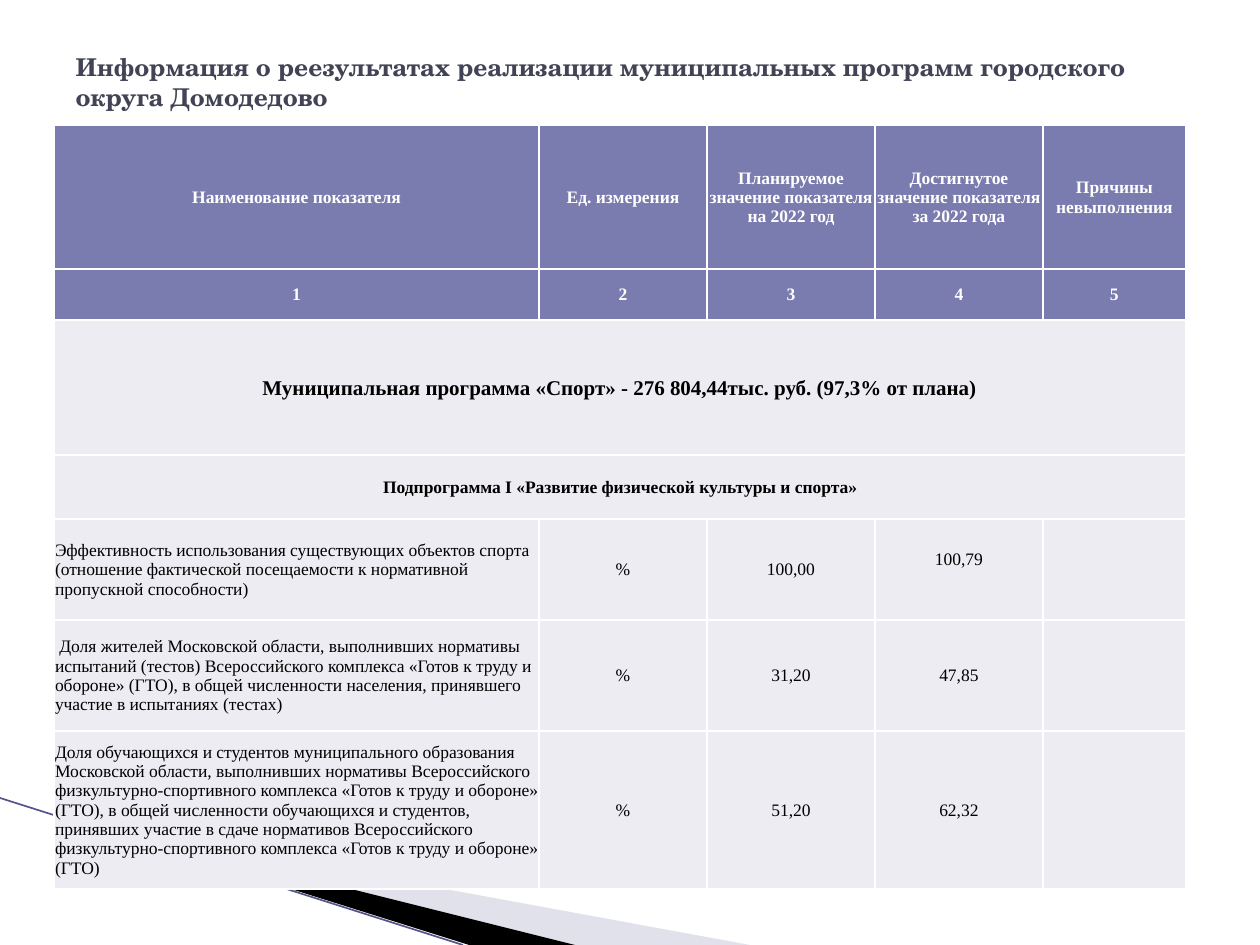
"""Build the slide on results of the municipal sport programme."""
from dataclasses import dataclass

from lxml import etree
from pptx import Presentation
from pptx.dml.color import RGBColor
from pptx.enum.shapes import MSO_CONNECTOR
from pptx.enum.text import MSO_ANCHOR, PP_ALIGN
from pptx.oxml.ns import qn
from pptx.util import Pt

LEFT, CENTER = PP_ALIGN.LEFT, PP_ALIGN.CENTER
MIDDLE = MSO_ANCHOR.MIDDLE
STRAIGHT = MSO_CONNECTOR.STRAIGHT
SCALE = 914400 / 126
SERIF = "Times New Roman"
HEAD, BODY, WHITE, BLACK = "7A7BAE", "ECECF2", "FFFFFF", "000000"


@dataclass
class Wedge:
    points: list
    fill: str
    alpha: int = 100


@dataclass
class Row:
    height: int
    texts: list
    fill: str = BODY
    color: str = BLACK
    bold: bool = True
    size: int = 10
    first: PP_ALIGN = CENTER


WEDGES = [
    Wedge([(69, 820), (750, 945), (575, 945), (69, 819)], "B6B6D1", 40),
    Wedge([(67, 818), (575, 945), (469, 945), (68, 819)], BLACK),
]
WIDTHS = [485, 168, 168, 168, 143]
ROWS = [
    Row(144, ["Наименование показателя", "Ед. измерения",
              "Планируемое значение показателя на 2022 год",
              "Достигнутое значение показателя за 2022 года",
              "Причины невыполнения"], HEAD, WHITE),
    Row(51, ["1", "2", "3", "4", "5"], HEAD, WHITE),
    Row(135, ["Муниципальная программа «Спорт» - 276 804,44тыс. руб. "
              "(97,3% от плана)"], size=12),
    Row(64, ["Подпрограмма I «Развитие физической культуры и спорта»"]),
    Row(101, ["Эффективность использования существующих объектов спорта "
              "(отношение фактической посещаемости к нормативной пропускной "
              "способности)", "%", "100,00", "100,79", ""],
        bold=False, first=LEFT),
    Row(111, [" Доля жителей Московской области, выполнивших нормативы "
              "испытаний (тестов) Всероссийского комплекса «Готов к труду и "
              "обороне» (ГТО), в общей численности населения, принявшего "
              "участие в испытаниях (тестах)", "%", "31,20", "47,85", ""],
        bold=False, first=LEFT),
    Row(158, ["Доля обучающихся и студентов муниципального образования "
              "Московской области, выполнивших нормативы Всероссийского "
              "физкультурно-спортивного комплекса «Готов к труду и обороне» "
              "(ГТО), в общей численности обучающихся и студентов, принявших "
              "участие в сдаче нормативов Всероссийского "
              "физкультурно-спортивного комплекса «Готов к труду и обороне» "
              "(ГТО)", "%", "51,20", "62,32", ""],
        bold=False, first=LEFT),
]


def px(count: int) -> int:
    """Turn pixels into EMU."""
    return round(count * SCALE)


def paint(target, color: str) -> None:
    """Give a fill a solid colour."""
    target.solid()
    target.fore_color.rgb = RGBColor.from_string(color)


def style(frame, font: str, size: int, color: str, bold: bool, align) -> None:
    """Format all text in a frame."""
    for para in frame.paragraphs:
        para.alignment = align
        para.font.size = Pt(size)
        for run in para.runs:
            run.font.name = font
            run.font.size = Pt(size)
            run.font.bold = bold
            run.font.color.rgb = RGBColor.from_string(color)


def draw_wedge(slide, wedge: Wedge) -> None:
    """Draw one corner wedge."""
    start, *rest = wedge.points
    pen = slide.shapes.build_freeform(*start, scale=SCALE)
    pen.add_line_segments(rest)
    shape = pen.convert_to_shape()
    shape.shadow.inherit = False
    paint(shape.fill, wedge.fill)
    shape.line.fill.background()
    if wedge.alpha < 100:
        tone = shape.fill._xPr.find(".//" + qn("a:srgbClr"))
        etree.SubElement(tone, qn("a:alpha"), val=str(wedge.alpha * 1000))


def draw_line(slide) -> None:
    """Draw the thin slanted line."""
    line = slide.shapes.add_connector(
        STRAIGHT, px(0), px(798), px(463), px(945))
    line.line.width = Pt(0.95)
    paint(line.line.fill, "53548A")
    etree.SubElement(line._element.spPr, qn("a:effectLst"))


def edge_cell(cell) -> None:
    """Put white borders round a cell, ahead of its fill."""
    props = cell._tc.get_or_add_tcPr()
    for spot, side in enumerate(("a:lnL", "a:lnR", "a:lnT", "a:lnB")):
        edge = etree.Element(qn(side), w=str(Pt(1)))
        fill = etree.SubElement(edge, qn("a:solidFill"))
        etree.SubElement(fill, qn("a:srgbClr"), val=WHITE)
        props.insert(spot, edge)


def draw_cell(cell, text: str, row: Row, align) -> None:
    """Fill and format one cell."""
    cell.text_frame.text = text
    cell.vertical_anchor = MIDDLE
    cell.margin_left = cell.margin_right = cell.margin_top = px(1)
    cell.margin_bottom = px(20 if text == "100,79" else 0)
    paint(cell.fill, row.fill)
    edge_cell(cell)
    style(cell.text_frame, SERIF, row.size, row.color, row.bold, align)


def draw_table(slide) -> None:
    """Draw the table of targets and results."""
    count = len(WIDTHS)
    table = slide.shapes.add_table(
        len(ROWS), count, px(54), px(125), px(sum(WIDTHS)),
        px(sum(row.height for row in ROWS))).table
    table.first_row = table.horz_banding = False
    for col, width in zip(table.columns, WIDTHS):
        col.width = px(width)
    for r, row in enumerate(ROWS):
        table.rows[r].height = px(row.height)
        texts = row.texts + [""] * (count - len(row.texts))
        for c, text in enumerate(texts):
            align = CENTER if c else row.first
            draw_cell(table.cell(r, c), text, row, align)
        if len(row.texts) == 1:
            table.cell(r, 0).merge(table.cell(r, count - 1))


def draw_title(slide) -> None:
    """Place and format the title."""
    title = slide.shapes.title
    title.left, title.top = px(63), px(38)
    title.width, title.height = px(1134), px(87)
    frame = title.text_frame
    frame.text = ("Информация о реезультатах реализации муниципальных "
                  "программ городского округа Домодедово")
    frame.word_wrap = True
    frame.vertical_anchor = MIDDLE
    style(frame, "TeX Gyre Schola", 14, "424456", True, LEFT)


def main() -> None:
    """Build and save the slide."""
    deck = Presentation()
    deck.slide_width, deck.slide_height = px(1260), px(945)
    slide = deck.slides.add_slide(deck.slide_layouts[5])
    for wedge in WEDGES:
        draw_wedge(slide, wedge)
    draw_line(slide)
    draw_title(slide)
    draw_table(slide)
    deck.save("out.pptx")


if __name__ == "__main__":
    main()
